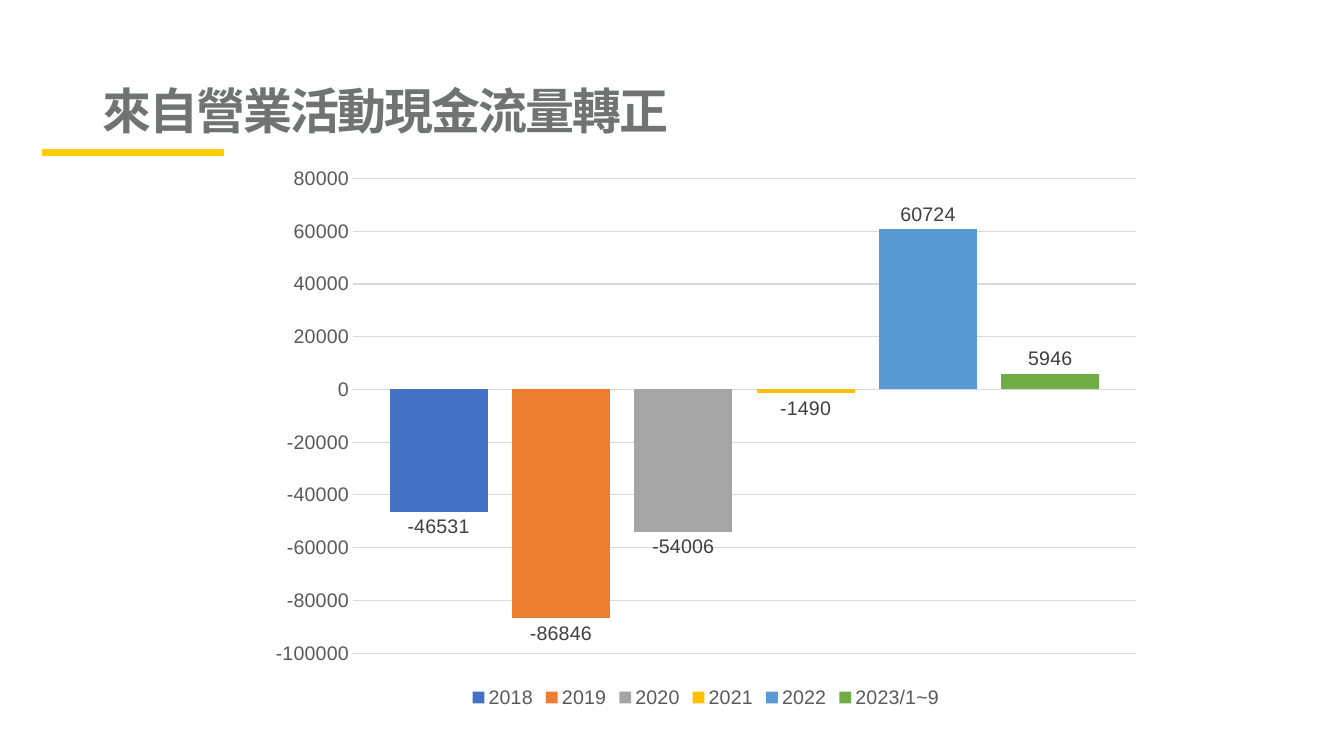
from lxml import etree
from pptx import Presentation
from pptx import util as u
from pptx.chart.data import CategoryChartData
from pptx.dml.color import RGBColor
from pptx.enum import chart as ce, shapes, text
from pptx.oxml.ns import qn

FACE = "Arial"
TITLE = RGBColor(0x70, 0x73, 0x72)
GOLD = RGBColor(0xFF, 0xCC, 0x00)
AXIS = RGBColor(0x59, 0x59, 0x59)
LABEL = RGBColor(0x40, 0x40, 0x40)
GRID = RGBColor(0xD9, 0xD9, 0xD9)
FLOWS = [
    ("2018", -46531, RGBColor(0x44, 0x72, 0xC4)),
    ("2019", -86846, RGBColor(0xED, 0x7D, 0x31)),
    ("2020", -54006, RGBColor(0xA5, 0xA5, 0xA5)),
    ("2021", -1490, RGBColor(0xFF, 0xC0, 0x00)),
    ("2022", 60724, RGBColor(0x5B, 0x9B, 0xD5)),
    ("2023/1~9", 5946, RGBColor(0x70, 0xAD, 0x47)),
]


def style(font, size, color, bold=False):
    font.name = FACE
    font.size = u.Pt(size)
    font.bold = bold
    font.color.rgb = color


def add_title(slide, words):
    box = slide.shapes.title
    box.left, box.top = u.Cm(2.33), u.Cm(1.02)
    box.width, box.height = u.Cm(29.21), u.Cm(3.68)
    frame = box.text_frame
    frame.word_wrap = True
    frame.auto_size = text.MSO_AUTO_SIZE.NONE
    frame.vertical_anchor = text.MSO_ANCHOR.MIDDLE
    para = frame.paragraphs[0]
    para.alignment = text.PP_ALIGN.LEFT
    para.line_spacing = 0.9
    run = para.add_run()
    run.text = words
    style(run.font, 35, TITLE, True)
    run.font._element.set("spc", "-150")


def add_rule(slide):
    y = u.Cm(3.84)
    rule = slide.shapes.add_connector(
        shapes.MSO_CONNECTOR.STRAIGHT, u.Cm(1.07), y, u.Cm(5.64), y)
    rule.line.color.rgb = GOLD
    rule.line.width = u.Pt(4.5)
    etree.SubElement(rule._element.spPr, qn("a:effectLst"))


def set_axes(chart):
    chart.category_axis.visible = False
    axis = chart.value_axis
    axis.minimum_scale, axis.maximum_scale = -100000, 80000
    axis.major_unit = 20000
    axis.major_tick_mark = axis.minor_tick_mark = ce.XL_TICK_MARK.NONE
    axis.format.line.fill.background()
    style(axis.tick_labels.font, 14, AXIS)
    grid = axis.major_gridlines.format.line
    grid.color.rgb = GRID
    grid.width = u.Pt(0.75)


def set_bars(plot):
    plot.gap_width = 75
    plot.overlap = -25
    plot.vary_by_categories = False
    for bar, (_, _, color) in zip(plot.series, FLOWS):
        bar.invert_if_negative = False
        bar.format.fill.solid()
        bar.format.fill.fore_color.rgb = color
        labels = bar.data_labels
        labels.show_value = True
        labels.position = ce.XL_LABEL_POSITION.OUTSIDE_END
        style(labels.font, 14, LABEL)


def add_chart(slide):
    data = CategoryChartData()
    data.categories = ["1"]
    for name, value, _ in FLOWS:
        data.add_series(name, [value])
    chart = slide.shapes.add_chart(
        ce.XL_CHART_TYPE.COLUMN_CLUSTERED,
        u.Cm(6.5), u.Cm(3.94), u.Cm(22.58), u.Cm(14.02), data).chart
    chart.has_title = False
    style(chart.font, 14, AXIS)
    set_axes(chart)
    set_bars(chart.plots[0])
    chart.has_legend = True
    chart.legend.position = ce.XL_LEGEND_POSITION.BOTTOM
    chart.legend.include_in_layout = False
    style(chart.legend.font, 14, AXIS)


def main():
    deck = Presentation()
    deck.slide_width, deck.slide_height = u.Cm(33.87), u.Cm(19.05)
    slide = deck.slides.add_slide(deck.slide_layouts[5])
    add_title(slide, "來自營業活動現金流量轉正")
    add_rule(slide)
    add_chart(slide)
    deck.save("out.pptx")


if __name__ == "__main__":
    main()
